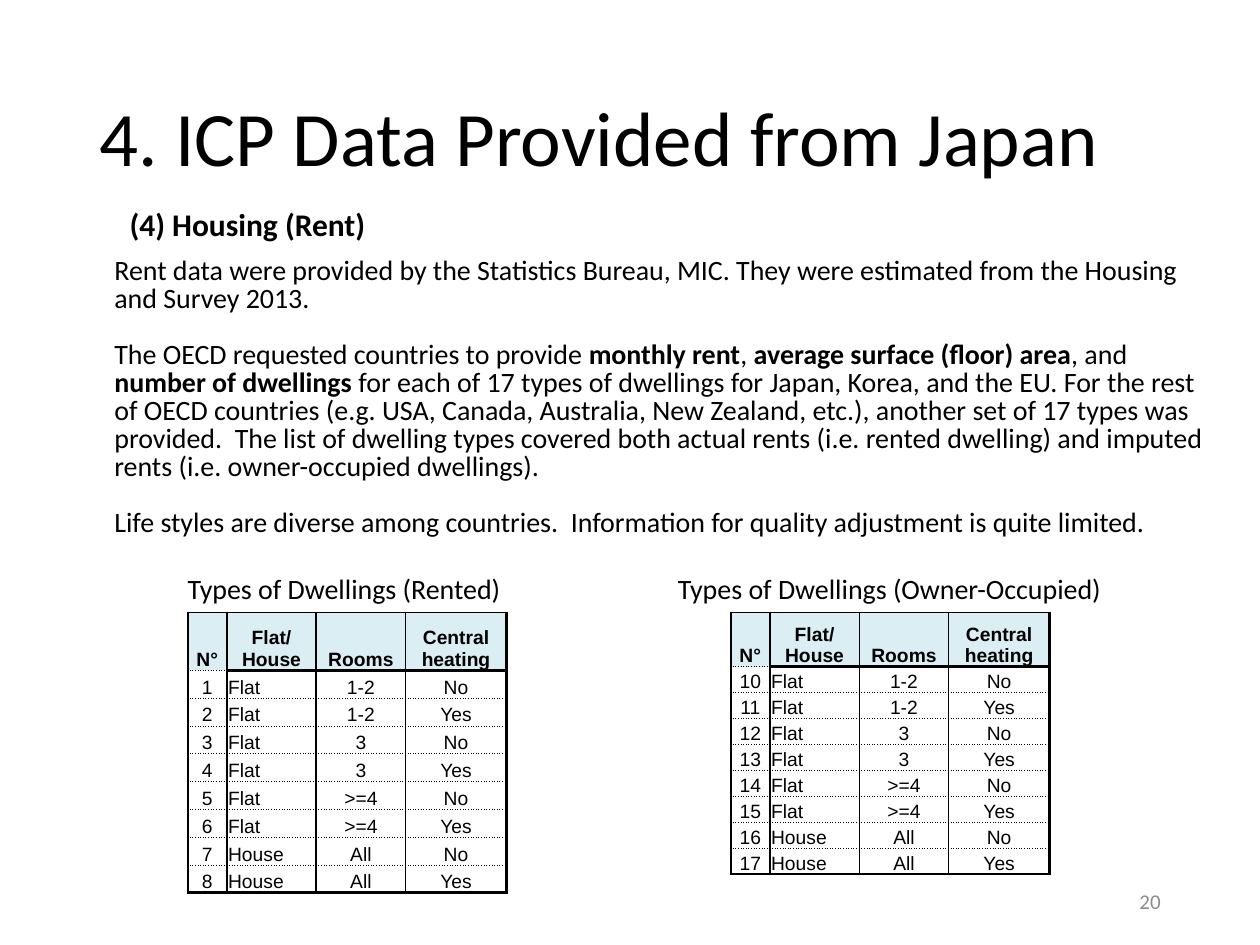
"""Build the slide on Japan's housing rent data with its two tables of dwelling types."""
from lxml.etree import SubElement
from pptx import Presentation
from pptx.dml.color import RGBColor
from pptx.enum.text import MSO_ANCHOR as Anchor, MSO_AUTO_SIZE as AutoSize, PP_ALIGN as Align
from pptx.oxml.ns import qn
from pptx.util import Inches, Pt

BLACK = RGBColor(0x00, 0x00, 0x00)
GRAY = RGBColor(0x8C, 0x8C, 0x8C)
PALE_BLUE = RGBColor(0xDA, 0xEE, 0xF3)
THIN, THICK, DOTTED = (1, "solid"), (2, "solid"), (0.5, "sysDot")

deck = Presentation()
deck.slide_width, deck.slide_height = Inches(10), Inches(7.5)
COL, ROW = deck.slide_width / 100, deck.slide_height / 75
slide = deck.slides.add_slide(deck.slide_layouts[5])


def add_text(left, top, width, height, paragraphs, size, color=BLACK, bold=None, align=Align.LEFT):
    box = slide.shapes.add_textbox(int(left * COL), int(top * ROW), int(width * COL), int(height * ROW))
    frame = box.text_frame
    frame.word_wrap = True
    for number, pieces in enumerate(paragraphs):
        paragraph = frame.add_paragraph() if number else frame.paragraphs[0]
        paragraph.alignment = align
        paragraph.font.name, paragraph.font.size = "Calibri", Pt(size)
        paragraph.font.color.rgb, paragraph.font.bold = color, bold
        for index, piece in enumerate(pieces):
            run = paragraph.add_run()
            run.text = piece
            if index % 2:
                run.font.bold = True
    return frame


def set_borders(cell, left, right, top, bottom):
    properties = cell._tc.get_or_add_tcPr()
    for position, (side, (weight, dash)) in enumerate(zip("LRTB", (left, right, top, bottom))):
        line = SubElement(properties, qn(f"a:ln{side}"), w=str(Pt(weight)))
        fill = SubElement(line, qn("a:solidFill"))
        SubElement(fill, qn("a:srgbClr"), val=str(BLACK))
        SubElement(line, qn("a:prstDash"), val=dash)
        properties.insert(position, line)


title = slide.shapes.title
title.left, title.top = int(6.9 * COL), int(4 * ROW)
title.width, title.height = int(86.2 * COL), int(14.5 * ROW)
title.text_frame.text = "4. ICP Data Provided from Japan"
title.text_frame.vertical_anchor = Anchor.MIDDLE
heading = title.text_frame.paragraphs[0]
heading.alignment, heading.line_spacing = Align.LEFT, 0.9
heading.font.name, heading.font.size, heading.font.color.rgb = "Calibri", Pt(44), BLACK

page_number = add_text(70.6, 69.5, 22.5, 4, [["20"]], 12, GRAY, align=Align.RIGHT)
page_number.vertical_anchor = Anchor.MIDDLE

add_text(9.3, 15.8, 83.8, 4, [["(4) Housing (Rent)"]], 18, bold=True)

rent_notes = add_text(8.1, 20, 88.4, 23.4, [
    ["Rent data were provided by the Statistics Bureau, MIC. They were estimated from the Housing "
     "and Survey 2013."],
    ["The OECD requested countries to provide ", "monthly rent", ", ", "average surface (floor) area",
     ", and ", "number of dwellings ",
     "for each of 17 types of dwellings for Japan, Korea, and the EU. For the rest of OECD countries "
     "(e.g. USA, Canada, Australia, New Zealand, etc.), another set of 17 types was provided.  "
     "The list of dwelling types covered both actual rents (i.e. rented dwelling) and imputed rents "
     "(i.e. owner-occupied dwellings)."],
    ["Life styles are diverse among countries.  Information for quality adjustment is quite limited."],
], 16)
rent_notes.auto_size = AutoSize.SHAPE_TO_FIT_TEXT
for note in rent_notes.paragraphs:
    note.line_spacing = Pt(16)
for note in rent_notes.paragraphs[1:]:
    note.space_before = Pt(16)

HEADER = ("N°", "Flat/ House", "Rooms", "Central heating")
COLUMN_WIDTHS = (3.1, 7.1, 7.1, 8)
DWELLINGS = [(kind, rooms, heating)
             for kind, rooms in (("Flat", "1-2"), ("Flat", "3"), ("Flat", ">=4"), ("House", "All"))
             for heating in ("No", "Yes")]
TABLES = (
    ("Types of Dwellings (Rented)", 13.4, 27.8, 14.9, 22.3, 4.6, 1, THICK),
    ("Types of Dwellings (Owner-Occupied)", 52.3, 36.6, 58, 20.8, 4.3, 10, THIN),
)

for caption, caption_left, caption_width, left, height, header_height, first, last_line in TABLES:
    add_text(caption_left, 44.9, caption_width, 3.7, [[caption]], 16, align=Align.CENTER)
    rows = [HEADER] + [(str(first + i), *dwelling) for i, dwelling in enumerate(DWELLINGS)]
    table = slide.shapes.add_table(len(rows), len(HEADER), int(left * COL), int(48.6 * ROW),
                                   int(sum(COLUMN_WIDTHS) * COL), int(height * ROW)).table
    table.first_row = table.horz_banding = False
    for column, width in zip(table.columns, COLUMN_WIDTHS):
        column.width = int(width * COL)
    body_height = (height - header_height) / len(DWELLINGS)
    for r, values in enumerate(rows):
        table.rows[r].height = int((body_height if r else header_height) * ROW)
        for c, value in enumerate(values):
            cell = table.cell(r, c)
            cell.text = value
            cell.vertical_anchor = Anchor.BOTTOM
            cell.margin_left = cell.margin_right = cell.margin_top = Inches(0.01)
            cell.margin_bottom = 0
            entry = cell.text_frame.paragraphs[0]
            entry.alignment = Align.LEFT if r and c == 1 else Align.CENTER
            entry.font.name, entry.font.size = "Arial", Pt(11)
            entry.font.color.rgb, entry.font.bold = BLACK, r == 0
            if r == 0:
                cell.fill.solid()
                cell.fill.fore_color.rgb = PALE_BLUE
            else:
                cell.fill.background()
            header_line = THICK if c else DOTTED
            top = (THIN, header_line)[r] if r < 2 else DOTTED
            bottom = header_line if r == 0 else last_line if r == len(DWELLINGS) else DOTTED
            set_borders(cell, THIN, THICK if c == len(HEADER) - 1 else THIN, top, bottom)

deck.save("out.pptx")
